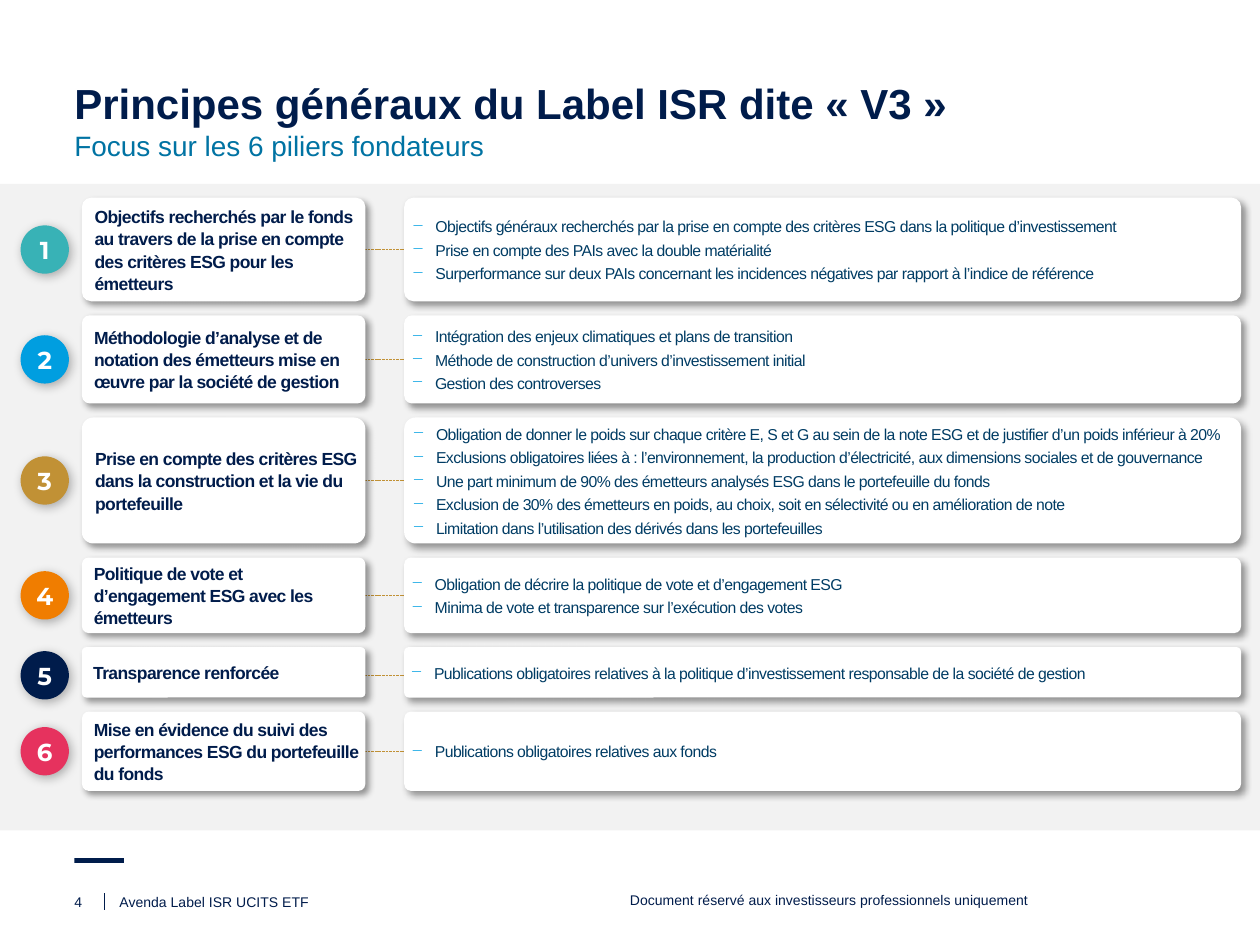
"""Build the slide presenting the six pillars of the ISR label."""
from dataclasses import dataclass

from lxml.etree import SubElement
from pptx import Presentation
from pptx.dml.color import RGBColor
from pptx.enum.dml import MSO_LINE
from pptx.enum.shapes import MSO_CONNECTOR, MSO_SHAPE
from pptx.enum.text import MSO_ANCHOR, MSO_AUTO_SIZE, PP_ALIGN
from pptx.oxml.ns import qn
from pptx.util import Pt

NAVY, WHITE, GOLD = "001C4B", "FFFFFF", "C19135"
FIRST_TOP, ROW_GAP = 113, 8
MARKER_SIZE = 27.6


@dataclass
class TextStyle:
    """Font and spacing of a text."""

    size: float
    color: str = NAVY
    name: str = "Arial"
    bold: bool = False
    tracking: int = 0
    align: PP_ALIGN = PP_ALIGN.LEFT
    spacing: float = 1
    after: float = 0
    bullet: str = ""


@dataclass
class Pillar:
    """One row of the slide."""

    height: float
    color: str
    heading: str
    points: list[str]
    marker_shift: float = 0


TITLE = TextStyle(24, bold=True, spacing=0.8)
SUBTITLE = TextStyle(16, "0073A3")
FOOTER = TextStyle(8)
HEADING = TextStyle(10, bold=True, tracking=-30, spacing=1.05, after=4)
POINT = TextStyle(9, "003C64", tracking=-30, spacing=1.05, after=2, bullet="−")
NUMBER = TextStyle(14, WHITE, "Montserrat", True, align=PP_ALIGN.CENTER)

PILLARS = [
    Pillar(59.2, "38B2B6",
           "Objectifs recherchés par le fonds au travers de la prise en compte des critères ESG pour les émetteurs",
           ["Objectifs généraux recherchés par la prise en compte des critères ESG dans la politique d’investissement",
            "Prise en compte des PAIs avec la double matérialité",
            "Surperformance sur deux PAIs concernant les incidences négatives par rapport à l’indice de référence"]),
    Pillar(50.4, "009EE0",
           "Méthodologie d’analyse et de notation des émetteurs mise en œuvre par la société de gestion",
           ["Intégration des enjeux climatiques et plans de transition",
            "Méthode de construction d’univers d’investissement initial",
            "Gestion des controverses"]),
    Pillar(72, GOLD,
           "Prise en compte des critères ESG dans la construction et la vie du portefeuille",
           ["Obligation de donner le poids sur chaque critère E, S et G au sein de la note ESG et de justifier d’un poids inférieur à 20%",
            "Exclusions obligatoires liées à : l’environnement, la production d’électricité, aux dimensions sociales et de gouvernance",
            "Une part minimum de 90% des émetteurs analysés ESG dans le portefeuille du fonds",
            "Exclusion de 30% des émetteurs en poids, au choix, soit en sélectivité ou en amélioration de note",
            "Limitation dans l’utilisation des dérivés dans les portefeuilles"]),
    Pillar(43.2, "F07D00",
           "Politique de vote et d’engagement ESG avec les émetteurs",
           ["Obligation de décrire la politique de vote et d’engagement ESG",
            "Minima de vote et transparence sur l’exécution des votes"]),
    Pillar(28.8, NAVY, "Transparence renforcée",
           ["Publications obligatoires relatives à la politique d’investissement responsable de la société de gestion"],
           1.7),
    Pillar(45.4, "E6325E",
           "Mise en évidence du suivi des performances ESG du portefeuille du fonds",
           ["Publications obligatoires relatives aux fonds"]),
]


def rgb(code: str) -> RGBColor:
    """Turn a hex string into a colour."""
    return RGBColor.from_string(code)


def apply(target, values: dict) -> None:
    """Set each attribute named in the values."""
    for key, value in values.items():
        setattr(target, key, value)


def add_bullet(para, character: str) -> None:
    """Give a paragraph a hanging bullet, or none."""
    properties = para._p.get_or_add_pPr()
    indent = Pt(13.5) if character else 0
    properties.set("marL", str(indent))
    properties.set("indent", str(-indent))
    if character:
        color = SubElement(properties, qn("a:buClr"))
        SubElement(color, qn("a:srgbClr"), val="00A0E3")
        SubElement(properties, qn("a:buChar"), char=character)
    else:
        SubElement(properties, qn("a:buNone"))


def write(shape, lines: list[str], style: TextStyle,
          insets=(0, 0, 0, 0), anchor=MSO_ANCHOR.TOP) -> None:
    """Fill a shape with paragraphs of one style."""
    frame = shape.text_frame
    sides = ("margin_left", "margin_top", "margin_right", "margin_bottom")
    apply(frame, dict(zip(sides, map(Pt, insets))))
    apply(frame, {"word_wrap": True, "auto_size": MSO_AUTO_SIZE.NONE, "vertical_anchor": anchor})
    for index, line in enumerate(lines):
        para = frame.add_paragraph() if index else frame.paragraphs[0]
        apply(para, {"alignment": style.align, "line_spacing": style.spacing,
                     "space_before": Pt(0), "space_after": Pt(style.after)})
        add_bullet(para, style.bullet)
        span = para.add_run()
        span.text = line
        apply(span.font, {"name": style.name, "size": Pt(style.size), "bold": style.bold})
        span.font.color.rgb = rgb(style.color)
        if style.tracking:
            span.font._element.set("spc", str(style.tracking))


def add_box(page, kind, place: tuple, color: str, shadow: tuple = ()):
    """Draw a filled shape, with an optional shadow of opacity, blur and distance."""
    box = page.shapes.add_shape(kind, *map(Pt, place))
    box.fill.solid()
    box.fill.fore_color.rgb = rgb(color)
    box.line.fill.background()
    box.shadow.inherit = False
    if shadow:
        opacity, blur, distance = shadow
        effects = box._element.spPr.find(qn("a:effectLst"))
        outer = SubElement(effects, qn("a:outerShdw"), blurRad=str(Pt(blur)),
                           dist=str(Pt(distance)), dir="2700000", algn="tl", rotWithShape="0")
        tint = SubElement(outer, qn("a:srgbClr"), val="000000")
        SubElement(tint, qn("a:alpha"), val=str(opacity * 1000))
    return box


def add_line(page, ends: tuple, color: str, dash=None) -> None:
    """Draw a thin straight line."""
    line = page.shapes.add_connector(MSO_CONNECTOR.STRAIGHT, *map(Pt, ends))
    line.line.color.rgb = rgb(color)
    apply(line.line, {"width": Pt(0.5), "dash_style": dash})
    SubElement(line._element.spPr, qn("a:effectLst"))


def add_card(page, place: tuple, lines: list[str], style: TextStyle, left_inset: float) -> None:
    """Draw a white rounded card with text."""
    card = add_box(page, MSO_SHAPE.ROUNDED_RECTANGLE, place, WHITE, (40, 4, 3))
    card.adjustments[0] = 0.09
    write(card, lines, style, (left_inset, 2.83, 2.83, 2.83), MSO_ANCHOR.MIDDLE)


def add_pillar(page, number: int, pillar: Pillar, top: float) -> None:
    """Draw the line, two cards and numbered marker of a row."""
    middle = top + pillar.height / 2 + pillar.marker_shift
    add_line(page, (102, middle, 371.5, middle), GOLD, MSO_LINE.SQUARE_DOT)
    add_card(page, (46.8, top, 162, pillar.height), [pillar.heading], HEADING, 5.67)
    add_card(page, (231, top, 478.2, pillar.height), pillar.points, POINT, 2.83)
    marker = add_box(page, MSO_SHAPE.OVAL,
                     (11.8, middle - MARKER_SIZE / 2, MARKER_SIZE, MARKER_SIZE),
                     pillar.color, (30, 6, 2))
    write(marker, [str(number)], NUMBER, anchor=MSO_ANCHOR.MIDDLE)


def add_placeholder_text(shape, place: tuple, text: str, style: TextStyle, anchor) -> None:
    """Move a placeholder and write its text."""
    apply(shape, dict(zip(("left", "top", "width", "height"), map(Pt, place))))
    write(shape, [text], style, anchor=anchor)


def main() -> None:
    """Assemble and save the deck."""
    deck = Presentation()
    apply(deck, {"slide_width": Pt(720), "slide_height": Pt(540)})
    page = deck.slides.add_slide(deck.slide_layouts[1])
    add_placeholder_text(page.shapes.title, (42.5, 42.5, 635, 30.2),
                         "Principes généraux du Label ISR dite «\u00a0V3\u00a0»".replace("\u00a0", " "),
                         TITLE, MSO_ANCHOR.BOTTOM)
    add_placeholder_text(page.placeholders[1], (42.5, 73.4, 635, 23.8),
                         "Focus sur les 6 piliers fondateurs", SUBTITLE, MSO_ANCHOR.TOP)
    add_box(page, MSO_SHAPE.RECTANGLE, (0, 105.1, 720, 369.4), "F2F2F2")
    add_box(page, MSO_SHAPE.RECTANGLE, (42.5, 490.3, 28.3, 2.8), NAVY)
    add_line(page, (59.8, 510.5, 59.8, 519.8), NAVY)
    top = FIRST_TOP
    for number, pillar in enumerate(PILLARS, 1):
        add_pillar(page, number, pillar, top)
        top += pillar.height + ROW_GAP
    for place, text, inset, anchor in (
        ((42.5, 510.5, 14.4, 14.4), "4", 0, MSO_ANCHOR.TOP),
        ((62.6, 510.5, 410.4, 14.4), "Avenda Label ISR UCITS ETF", 5.67, MSO_ANCHOR.TOP),
        ((360, 504.2, 240.5, 20.2), "Document réservé aux investisseurs professionnels uniquement",
         0, MSO_ANCHOR.MIDDLE),
    ):
        box = page.shapes.add_textbox(*map(Pt, place))
        write(box, [text], FOOTER, (inset, 0, 0, 0), anchor)
    deck.save("out.pptx")


if __name__ == "__main__":
    main()
